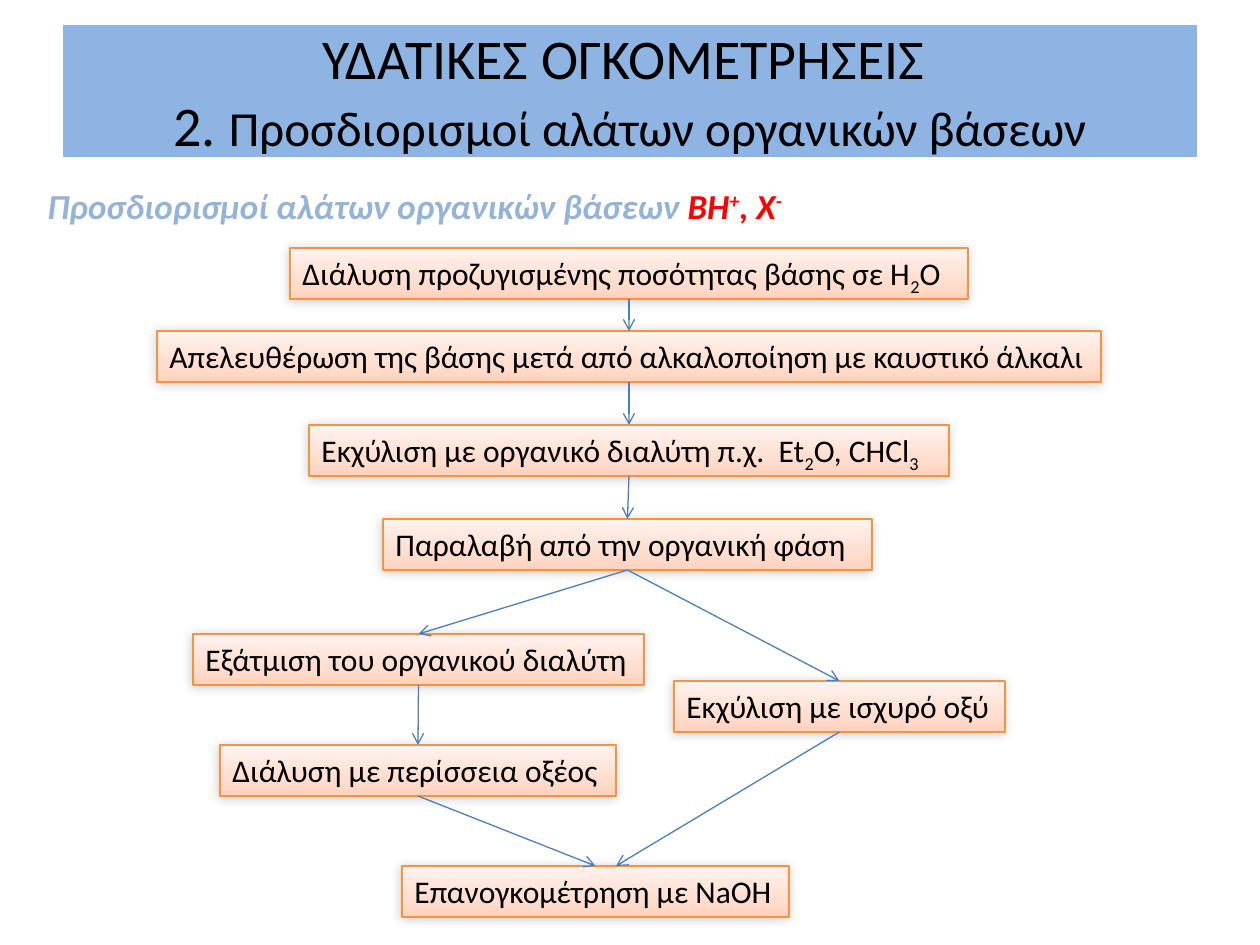
from lxml import etree
from pptx import Presentation
from pptx.dml.color import RGBColor
from pptx.enum.shapes import MSO_CONNECTOR, MSO_SHAPE
from pptx.enum.text import MSO_ANCHOR, MSO_AUTO_SIZE, PP_ALIGN
from pptx.oxml import parse_xml
from pptx.oxml.ns import nsdecls, qn
from pptx.util import Pt

PX = 914400 // 126
BLACK = RGBColor(0x00, 0x00, 0x00)
RED = RGBColor(0xFF, 0x00, 0x00)
PALE_BLUE = RGBColor(0x95, 0xB3, 0xD7)
BANNER_BLUE = RGBColor(0x8E, 0xB4, 0xE3)
ARROW_BLUE = RGBColor(0x4B, 0x7E, 0xBC)
ORANGE = RGBColor(0xF6, 0x92, 0x40)
PEACH_STOPS = [(0, "FFD2BD"), (35, "FFDED0"), (100, "FFF2ED")]
TOP, BOTTOM = 0, 2


def add_text(paragraph, text, size=18, color=BLACK, bold=None, italic=None, baseline=None):
    """Append one formatted run."""
    run = paragraph.add_run()
    run.text = text
    font = run.font
    font.name, font.size, font.bold, font.italic = "Calibri", Pt(size), bold, italic
    font.color.rgb = color
    if baseline:
        font._element.set("baseline", str(baseline * 1000))


def add_arrow(start, end):
    """Draw an arrow between two points in EMU."""
    arrow = slide.shapes.add_connector(MSO_CONNECTOR.STRAIGHT, *start, *end)
    arrow.line.color.rgb = ARROW_BLUE
    arrow.line.width = Pt(0.75)
    etree.SubElement(arrow.line._get_or_add_ln(), qn("a:tailEnd"), type="arrow")
    etree.SubElement(arrow._element.spPr, qn("a:effectLst"))
    return arrow


prs = Presentation()
prs.slide_width, prs.slide_height = 1260 * PX, 945 * PX
slide = prs.slides.add_slide(prs.slide_layouts[5])

# Title banner
title = slide.shapes.title
title.left, title.top, title.width, title.height = 63 * PX, 25 * PX, 1134 * PX, 132 * PX
title.fill.solid()
title.fill.fore_color.rgb = BANNER_BLUE
title.text_frame.auto_size = MSO_AUTO_SIZE.NONE
title.text_frame.vertical_anchor = MSO_ANCHOR.MIDDLE
title_line = title.text_frame.paragraphs[0]
title_line.alignment = PP_ALIGN.CENTER
add_text(title_line, "ΥΔΑΤΙΚΕΣ ΟΓΚΟΜΕΤΡΗΣΕΙΣ ", size=32)
title_line.add_line_break()
etree.SubElement(title_line._p[-1], qn("a:rPr"), sz="3200")
add_text(title_line, "2. ", size=32)
add_text(title_line, "Προσδιορισμοί αλάτων οργανικών βάσεων", size=28)

# Heading with the salt formula
heading = slide.shapes.add_textbox(35 * PX, 178 * PX, 1187 * PX, 55 * PX)
heading.text_frame.word_wrap = True
heading_line = heading.text_frame.paragraphs[0]
for text, color, baseline in [
    ("Προσδιορισμοί αλάτων οργανικών βάσεων ", PALE_BLUE, None),
    ("ΒΗ", RED, None), ("+", RED, 30), (", Χ", RED, None), ("-", RED, 30),
]:
    add_text(heading_line, text, size=20, color=color, bold=True, italic=True, baseline=baseline)

# Steps: left, top, width, text pieces (every second piece is a subscript)
STEP_HEIGHT = 51
STEPS = {
    "weigh": (290, 248, 678, ["Διάλυση προζυγισμένης ποσότητας βάσης σε H", "2", "O"]),
    "release": (157, 331, 944, ["Απελευθέρωση της βάσης μετά από αλκαλοποίηση με καυστικό άλκαλι"]),
    "extract": (309, 425, 640, ["Εκχύλιση με οργανικό διαλύτη π.χ.  Et", "2", "O, CHCl", "3"]),
    "collect": (383, 519, 489, ["Παραλαβή από την οργανική φάση"]),
    "evaporate": (193, 634, 451, ["Εξάτμιση του οργανικού διαλύτη"]),
    "dissolve": (220, 745, 396, ["Διάλυση με περίσσεια οξέος"]),
    "acid": (674, 681, 331, ["Εκχύλιση με ισχυρό οξύ"]),
    "titrate": (402, 866, 387, ["Επανογκομέτρηση με NaOH"]),
}
stops = "".join(
    f'<a:gs pos="{pos * 1000}"><a:srgbClr val="{color}"/></a:gs>' for pos, color in PEACH_STOPS
)
gradient_xml = (
    f'<a:gradFill {nsdecls("a")} rotWithShape="1"><a:gsLst>{stops}</a:gsLst>'
    '<a:lin ang="16200000" scaled="1"/></a:gradFill>'
)
shadow_xml = (
    f'<a:outerShdw {nsdecls("a")} blurRad="{Pt(6)}" dist="{Pt(1)}" dir="8100000" rotWithShape="0">'
    '<a:srgbClr val="000000"><a:alpha val="20000"/></a:srgbClr></a:outerShdw>'
)
steps = {}
for key, (left, top, width, pieces) in STEPS.items():
    step = slide.shapes.add_shape(
        MSO_SHAPE.RECTANGLE, left * PX, top * PX, width * PX, STEP_HEIGHT * PX
    )
    step._element.spPr.insert(2, parse_xml(gradient_xml))
    step.line.color.rgb = ORANGE
    step.line.width = Pt(0.75)
    step.shadow.inherit = False
    step._element.spPr.find(qn("a:effectLst")).append(parse_xml(shadow_xml))
    frame = step.text_frame
    frame.word_wrap = False
    frame.auto_size = MSO_AUTO_SIZE.SHAPE_TO_FIT_TEXT
    frame.vertical_anchor = MSO_ANCHOR.TOP
    frame.paragraphs[0].alignment = PP_ALIGN.LEFT
    for index, piece in enumerate(pieces):
        add_text(frame.paragraphs[0], piece, baseline=-25 if index % 2 else None)
    steps[key] = step

# Arrows from the bottom of one step to the top of the next
for source, target in [
    ("weigh", "release"), ("release", "extract"), ("extract", "collect"),
    ("collect", "evaporate"), ("collect", "acid"),
    ("evaporate", "dissolve"), ("dissolve", "titrate"),
]:
    arrow = add_arrow((0, 0), (0, 0))
    arrow.begin_connect(steps[source], BOTTOM)
    arrow.end_connect(steps[target], TOP)

# The acid branch lands right of the middle of the last step
acid_arrow = add_arrow((840 * PX, 732 * PX), (616 * PX, 866 * PX))
acid_arrow.begin_connect(steps["acid"], BOTTOM)

prs.save("out.pptx")
